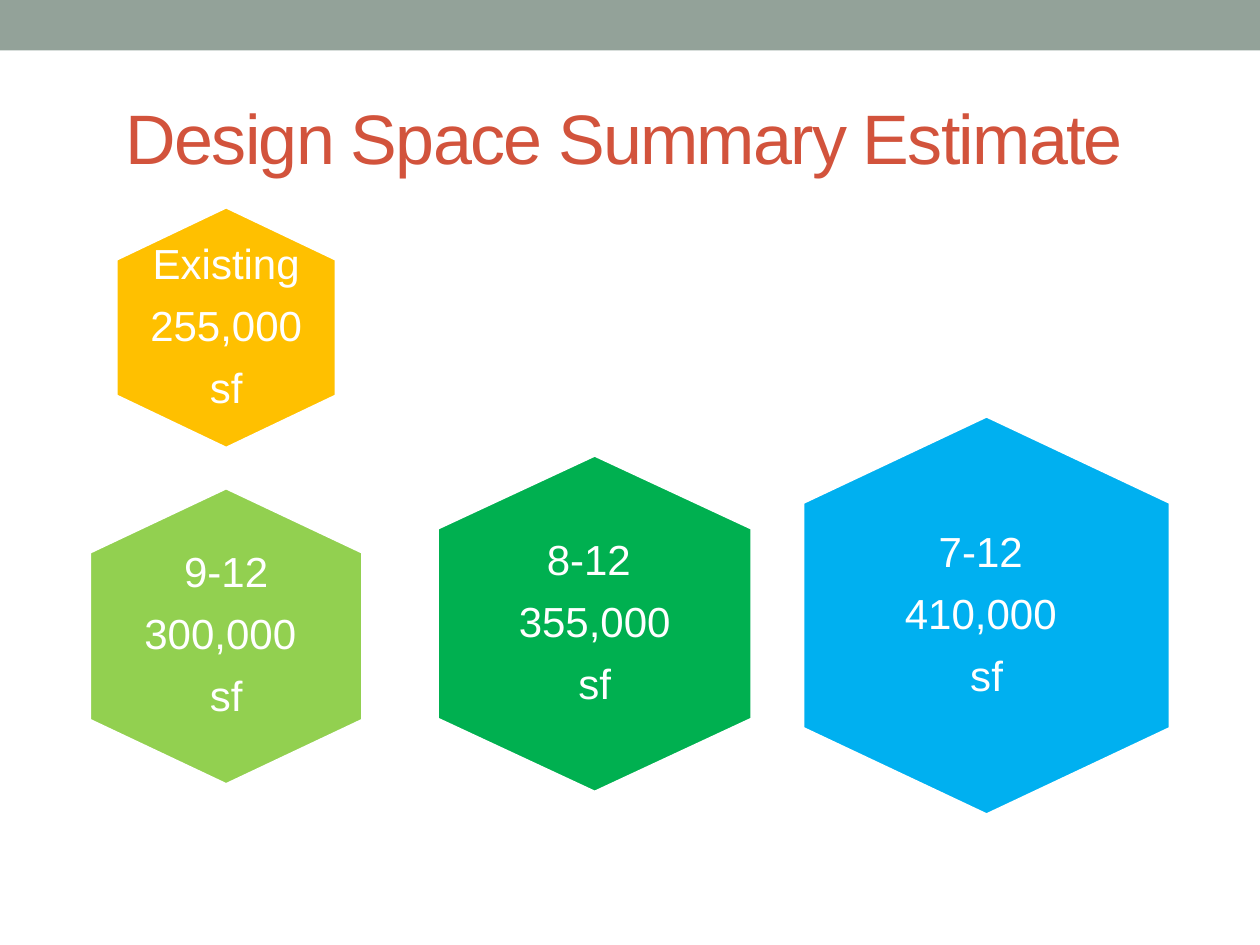
from pptx import Presentation
from pptx.dml.color import RGBColor
from pptx.enum.shapes import MSO_SHAPE
from pptx.enum.text import MSO_ANCHOR, PP_ALIGN
from pptx.util import Inches, Pt

RECTANGLE = MSO_SHAPE.RECTANGLE
MIDDLE = MSO_ANCHOR.MIDDLE
CENTER = PP_ALIGN.CENTER

COLORS = {
    "band": "93A299",
    "title": "D2533C",
    "white": "FFFFFF",
    "lime": "92D050",
    "amber": "FFC000",
    "green": "00B050",
    "blue": "00B0F0",
}
SHOULDER = 0.217  # height of a hexagon's sloping part, as a share of its height


def color(name):
    return RGBColor.from_string(COLORS[name])


def write_text(shape, lines, size, font_color, insets, line_spacing=None,
               space_after=None, tracking=None):
    frame = shape.text_frame
    frame.word_wrap = True
    frame.vertical_anchor = MIDDLE
    frame.margin_left = frame.margin_right = Inches(insets[0])
    frame.margin_top = frame.margin_bottom = Inches(insets[1])
    for index, line in enumerate(lines):
        paragraph = frame.add_paragraph() if index else frame.paragraphs[0]
        paragraph.alignment = CENTER
        paragraph.line_spacing = line_spacing
        paragraph.space_after = space_after
        run = paragraph.add_run()
        run.text = line
        run.font.name = "Arial"
        run.font.size = Pt(size)
        run.font.color.rgb = color(font_color)
        if tracking is not None:
            run.font._element.set("spc", str(tracking * 100))


presentation = Presentation()
presentation.slide_width = Inches(10)
presentation.slide_height = Inches(7.5)
slide = presentation.slides.add_slide(presentation.slide_layouts[6])

# Top band
band = slide.shapes.add_shape(RECTANGLE, 0, 0, Inches(10), Inches(0.4))
band.shadow.inherit = False
band.fill.solid()
band.fill.fore_color.rgb = color("band")
band.line.fill.background()

# Title
title = slide.shapes.add_textbox(Inches(0.5), Inches(0.58), Inches(9), Inches(1.01))
write_text(title, ["Design Space Summary Estimate\t"], size=40,
           font_color="title", insets=(0.1, 0.05), tracking=-1)

# Hexagons: left, top, width, height, fill, insets, lines
WIDE, NARROW = (0.38, 0.42), (0.27, 0.31)
hexagons = [
    (0.71, 3.87, 2.17, 2.36, "lime", WIDE, ["9-12", "300,000 ", "sf"]),
    (0.92, 1.64, 1.75, 1.92, "amber", NARROW, ["Existing ", "255,000 ", "sf"]),
    (3.47, 3.61, 2.5, 2.68, "green", WIDE, ["8-12 ", "355,000", "sf"]),
    (6.37, 3.3, 2.92, 3.17, "blue", NARROW, ["7-12 ", "410,000 ", "sf"]),
]
for left, top, width, height, fill, insets, lines in hexagons:
    center, right, bottom = left + width / 2, left + width, top + height
    upper, lower = top + SHOULDER * height, bottom - SHOULDER * height
    corners = [(right, upper), (right, lower), (center, bottom),
               (left, lower), (left, upper)]
    builder = slide.shapes.build_freeform(Inches(center), Inches(top))
    builder.add_line_segments([(Inches(x), Inches(y)) for x, y in corners], close=True)
    hexagon = builder.convert_to_shape()
    hexagon.shadow.inherit = False
    hexagon.fill.solid()
    hexagon.fill.fore_color.rgb = color(fill)
    hexagon.line.color.rgb = color("white")
    hexagon.line.width = Pt(2.08)
    write_text(hexagon, lines, size=24, font_color="white", insets=insets,
               line_spacing=0.9, space_after=Pt(9.5))

presentation.save("out.pptx")
